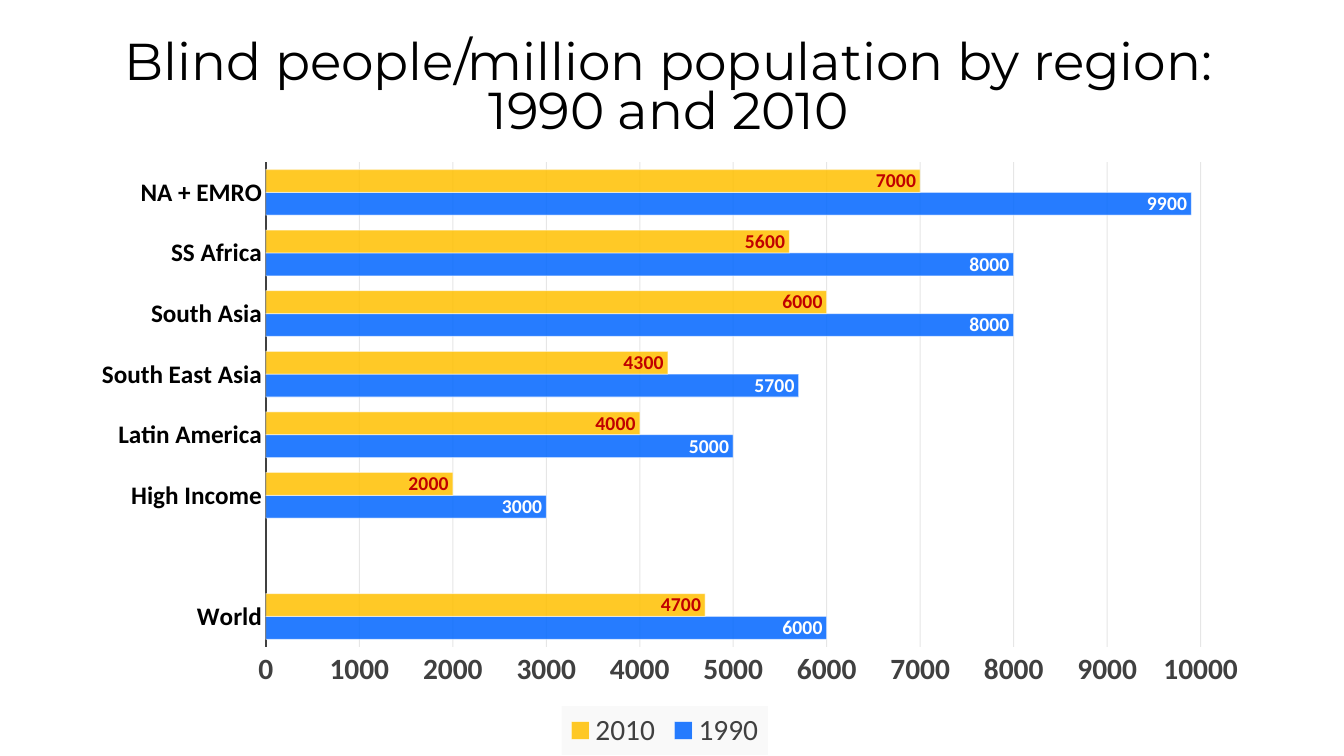
from dataclasses import dataclass

import pptx
import pptx.chart.data
import pptx.dml.color
import pptx.enum.chart
import pptx.enum.text
import pptx.oxml
import pptx.oxml.ns
import pptx.util
from pptx.util import Cm


@dataclass(frozen=True)
class Theme:
    title_font: str = "Montserrat"
    chart_font: str = "Calibri"
    black: str = "000000"
    white: str = "FFFFFF"
    grey: str = "404040"
    grid: str = "0D0D0D"
    legend_fill: str = "F2F2F2"
    blue: str = "0066FF"
    amber: str = "FFC000"
    red: str = "C00000"
    title_size: int = 37
    axis_size: int = 21
    category_size: int = 18
    label_size: int = 14
    base_size: int = 10


THEME = Theme()
TITLE = ("Blind people/million population by region:", "1990 and 2010")
REGIONS = ("World", "", "High Income", "Latin America", "South East Asia",
           "South Asia", "SS Africa", "NA + EMRO")
# Year, values, bar colour, label colour
YEARS = (
    ("1990", (6000, None, 3000, 5000, 5700, 8000, 8000, 9900), THEME.blue, THEME.white),
    ("2010", (4700, None, 2000, 4000, 4300, 6000, 5600, 7000), THEME.amber, THEME.red),
)


def rgb(color):
    return pptx.dml.color.RGBColor.from_string(color)


def style_font(font, name, size, color, bold=False):
    font.name = name
    font.size = pptx.util.Pt(size)
    font.bold = bold
    font.color.rgb = rgb(color)


def style_line(line, color, width):
    line.color.rgb = rgb(color)
    line.width = pptx.util.Pt(width)


def set_alpha(chart, xpath, percent):
    for color in chart.element.xpath(xpath):
        alpha = pptx.oxml.parse_xml(
            f'<a:alpha {pptx.oxml.ns.nsdecls("a")} val="{percent * 1000}"/>')
        color.append(alpha)


def set_layout(parent, index, target, **fractions):
    """Place a chart part by fractions of the chart's size."""
    old = parent.find(pptx.oxml.ns.qn("c:layout"))
    if old is not None:
        parent.remove(old)
    target_tag = f'<c:layoutTarget val="{target}"/>' if target else ""
    modes = '<c:xMode val="edge"/><c:yMode val="edge"/>'
    sizes = "".join(f'<c:{key} val="{value}"/>' for key, value in fractions.items())
    parent.insert(index, pptx.oxml.parse_xml(
        f'<c:layout {pptx.oxml.ns.nsdecls("c")}><c:manualLayout>'
        f'{target_tag}{modes}{sizes}</c:manualLayout></c:layout>'))


def add_title(slide, lines):
    box = slide.shapes.add_textbox(Cm(1.52), Cm(0.76), Cm(30.66), Cm(3.02))
    frame = box.text_frame
    frame.word_wrap = True
    frame.vertical_anchor = pptx.enum.text.MSO_ANCHOR.MIDDLE
    frame.text = "\n".join(lines)
    for paragraph in frame.paragraphs:
        paragraph.alignment = pptx.enum.text.PP_ALIGN.CENTER
        paragraph.line_spacing = 0.8
        for run in paragraph.runs:
            style_font(run.font, THEME.title_font, THEME.title_size, THEME.black)


def style_axes(chart):
    for axis in (chart.category_axis, chart.value_axis):
        axis.major_tick_mark = pptx.enum.chart.XL_TICK_MARK.NONE
        axis.minor_tick_mark = pptx.enum.chart.XL_TICK_MARK.NONE

    regions = chart.category_axis
    style_font(regions.tick_labels.font, THEME.chart_font, THEME.category_size,
               THEME.black, bold=True)
    style_line(regions.format.line, THEME.grey, 1.5)

    values = chart.value_axis
    values.minimum_scale, values.maximum_scale, values.major_unit = 0, 10000, 1000
    style_font(values.tick_labels.font, THEME.chart_font, THEME.axis_size,
               THEME.grey, bold=True)
    values.format.line.fill.background()
    values.has_major_gridlines = True
    style_line(values.major_gridlines.format.line, THEME.grid, 0.75)
    set_alpha(chart, "//c:majorGridlines//a:srgbClr", 10)


def style_series(chart):
    plot = chart.plots[0]
    plot.gap_width = 65
    plot.overlap = 0
    plot.vary_by_categories = False
    for series, (_, _, bar_color, label_color) in zip(plot.series, YEARS):
        series.invert_if_negative = False
        series.format.fill.solid()
        series.format.fill.fore_color.rgb = rgb(bar_color)
        style_line(series.format.line, THEME.white, 0.75)
        labels = series.data_labels
        labels.show_value = True
        labels.position = pptx.enum.chart.XL_LABEL_POSITION.INSIDE_END
        style_font(labels.font, THEME.chart_font, THEME.label_size, label_color, bold=True)
    set_alpha(chart, "//c:ser/c:spPr/a:solidFill/a:srgbClr", 85)
    set_alpha(chart, "//c:ser/c:spPr/a:ln//a:srgbClr", 50)


def style_legend(chart):
    chart.has_legend = True
    legend = chart.legend
    legend.position = pptx.enum.chart.XL_LEGEND_POSITION.BOTTOM
    legend.include_in_layout = False
    style_font(legend.font, THEME.chart_font, THEME.axis_size, THEME.grey)
    element = chart.element.xpath("//c:legend")[0]
    set_layout(element, 1, None, x=0.41, y=0.92)
    element.find(pptx.oxml.ns.qn("c:txPr")).addprevious(pptx.oxml.parse_xml(
        f'<c:spPr {pptx.oxml.ns.nsdecls("c", "a")}><a:solidFill>'
        f'<a:srgbClr val="{THEME.legend_fill}"/></a:solidFill></c:spPr>'))
    set_alpha(chart, "//c:legend/c:spPr//a:srgbClr", 39)


def add_bar_chart(slide):
    data = pptx.chart.data.CategoryChartData()
    data.categories = REGIONS
    for year, values, _, _ in YEARS:
        data.add_series(year, values)
    chart = slide.shapes.add_chart(
        pptx.enum.chart.XL_CHART_TYPE.BAR_CLUSTERED,
        Cm(1.93), Cm(3.78), Cm(29.82), Cm(15.27), data).chart
    chart.has_title = False
    style_font(chart.font, THEME.chart_font, THEME.base_size, THEME.black)
    style_axes(chart)
    style_series(chart)
    style_legend(chart)
    set_layout(chart.element.xpath("//c:plotArea")[0], 0, "inner",
               x=0.16, y=0.02, w=0.79, h=0.8)


def main():
    presentation = pptx.Presentation()
    presentation.slide_width = Cm(33.87)
    presentation.slide_height = Cm(19.05)
    slide = presentation.slides.add_slide(presentation.slide_layouts[6])

    # Heading
    add_title(slide, TITLE)

    # Blindness by region
    add_bar_chart(slide)

    presentation.save("out.pptx")


if __name__ == "__main__":
    main()
